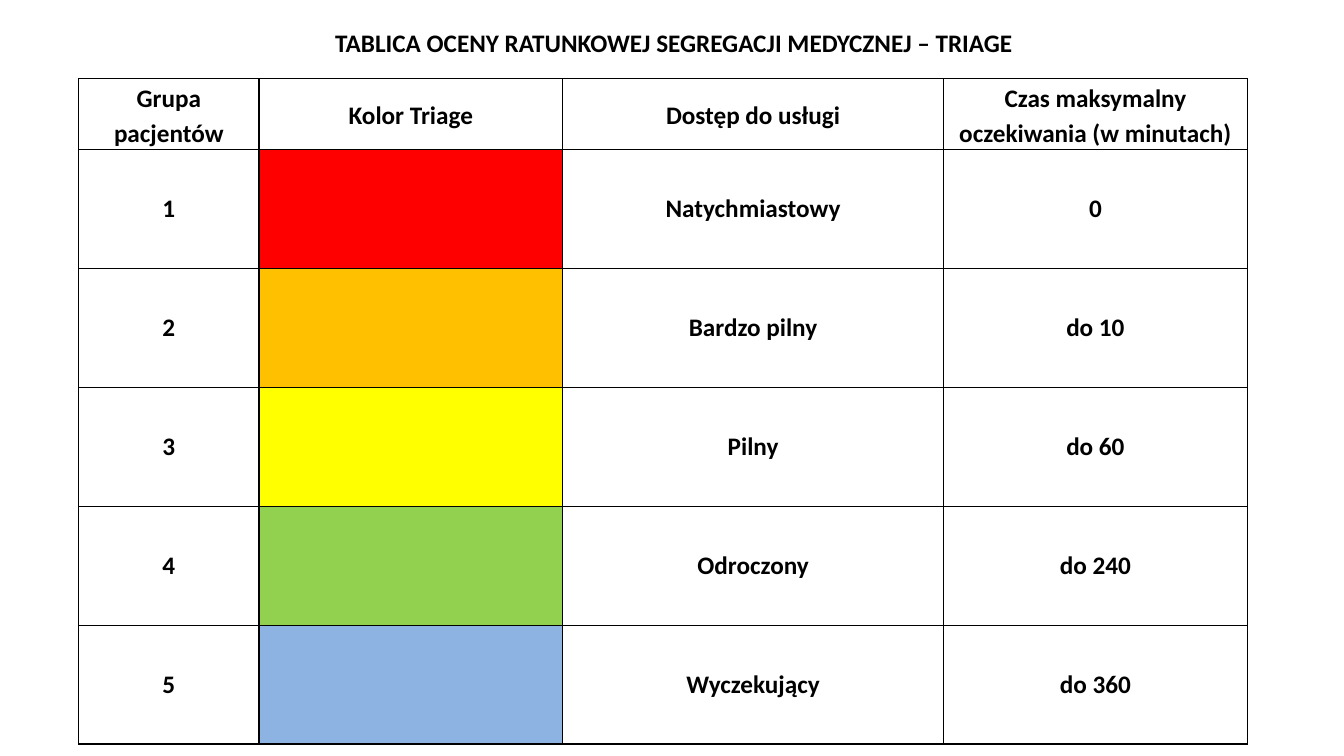
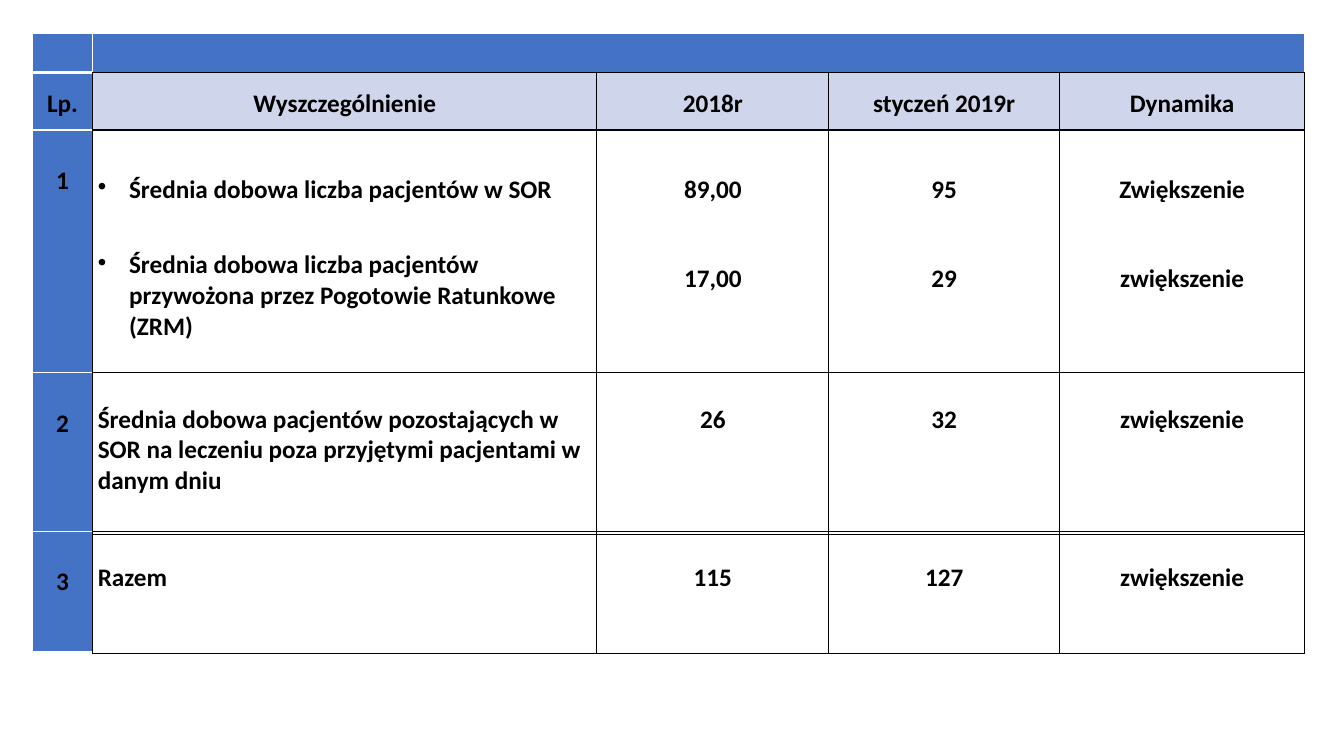
from lxml.etree import SubElement
from pptx import Presentation
from pptx.dml.color import RGBColor
from pptx.enum.text import MSO_ANCHOR as Anchor, MSO_AUTO_SIZE as AutoSize, PP_ALIGN as Align
from pptx.oxml.ns import qn
from pptx.util import Pt

PX = 9144  # one px is a hundredth of an inch
SLIDE_W, SLIDE_H = 1333, 750
TITLE_ONLY, BLANK = 5, 6
FONT = "Calibri"
COLORS = {
    "ink": "000000", "paper": "FFFFFF", "band": "4472C4", "heading": "CFD5EA",
    "red": "FF0000", "orange": "FFC000", "yellow": "FFFF00",
    "green": "92D050", "blue": "8DB3E2",
}

TRIAGE_TITLE = "TABLICA OCENY RATUNKOWEJ SEGREGACJI MEDYCZNEJ – TRIAGE"
TRIAGE_HEADINGS = ["Grupa pacjentów", "Kolor Triage", "Dostęp do usługi",
                   "Czas maksymalny oczekiwania (w minutach)"]
TRIAGE_GROUPS = [
    ("red", "Natychmiastowy", "0"),
    ("orange", "Bardzo pilny", "do 10"),
    ("yellow", "Pilny", "do 60"),
    ("green", "Odroczony", "do 240"),
    ("blue", "Wyczekujący", "do 360"),
]

STATS_COLUMNS = [60, 500, 230, 229, 243]
STATS_HEADINGS = ["Lp.", "Wyszczególnienie", "2018r", "styczeń 2019r", "Dynamika"]
DAILY_PATIENTS = [
    ["1"],
    ["Średnia dobowa liczba pacjentów w SOR",
     "Średnia dobowa liczba pacjentów przywożona przez Pogotowie Ratunkowe (ZRM)"],
    ["89,00", "17,00"],
    ["95", "29"],
    ["Zwiększenie", "zwiększenie"],
]
REMAINING_PATIENTS = [
    ["2"],
    ["Średnia dobowa pacjentów pozostających w SOR na leczeniu poza "
     "przyjętymi pacjentami w danym dniu"],
    ["26"], ["32"], ["zwiększenie"],
]
TOTAL = [["3"], ["Razem"], ["115"], ["127"], ["zwiększenie"]]


def rgb(name):
    return RGBColor.from_string(COLORS[name])


def add_bullet(paragraph, indent=31):
    properties = paragraph._p.get_or_add_pPr()
    properties.set("marL", str(indent * PX))
    properties.set("indent", str(-indent * PX))
    SubElement(properties, qn("a:buChar"), char="•")


def write(frame, lines, align=Align.CENTER, spacing=1.0, gap=0, bullets=False):
    """Fill a text frame with bold lines; gap is the space between them in points."""
    frame.word_wrap = True
    for index, line in enumerate(lines):
        paragraph = frame.add_paragraph() if index else frame.paragraphs[0]
        paragraph.alignment = align
        paragraph.line_spacing = spacing
        paragraph.space_before = Pt(gap if index else 0)
        run = paragraph.add_run()
        run.text = line
        run.font.name, run.font.size, run.font.bold = FONT, Pt(18), True
        run.font.color.rgb = rgb("ink")
        if bullets:
            add_bullet(paragraph)


def set_borders(cell, **sides):
    """Draw the four edges in ink at 1 pt, except sides given as (colour, points)."""
    properties = cell._tc.get_or_add_tcPr()
    for side in "LRTB":
        color, width = sides.get(side, ("ink", 1))
        line = SubElement(properties, qn(f"a:ln{side}"), w=str(Pt(width)))
        fill = SubElement(line, qn("a:solidFill"))
        SubElement(fill, qn("a:srgbClr"), val=COLORS[color])


def format_cell(cell, lines=(), fill=None, inset=5, top=0, anchor=Anchor.MIDDLE,
                borders=None, **text_format):
    set_borders(cell, **(borders or {}))
    if fill:
        cell.fill.solid()
        cell.fill.fore_color.rgb = rgb(fill)
    else:
        cell.fill.background()
    cell.margin_left = cell.margin_right = inset * PX
    cell.margin_top, cell.margin_bottom = top * PX, 0
    cell.vertical_anchor = anchor
    if lines:
        write(cell.text_frame, lines, **text_format)


def add_grid(slide, left, top, columns, rows):
    table = slide.shapes.add_table(
        len(rows), len(columns), left * PX, top * PX,
        sum(columns) * PX, sum(rows) * PX).table
    table.first_row = table.horz_banding = False
    for column, width in zip(table.columns, columns):
        column.width = width * PX
    for row, height in zip(table.rows, rows):
        row.height = height * PX
    return table


def add_title(slide, text):
    title = slide.shapes.title
    title.left, title.top, title.width, title.height = (
        length * PX for length in (33, 18, 1271, 43))
    title.text_frame.auto_size = AutoSize.NONE
    title.text_frame.vertical_anchor = Anchor.TOP
    write(title.text_frame, [text], spacing=1.15)


def build_triage(slide):
    add_title(slide, TRIAGE_TITLE)
    table = add_grid(slide, 78, 78, [179, 301, 378, 301],
                     [69] + [118] * len(TRIAGE_GROUPS))
    for column, heading in enumerate(TRIAGE_HEADINGS):
        format_cell(table.cell(0, column), [heading], inset=6, spacing=1.15)
    for number, (color, access, wait) in enumerate(TRIAGE_GROUPS, start=1):
        for column, label in ((0, str(number)), (2, access), (3, wait)):
            format_cell(table.cell(number, column), [label], inset=6)
        format_cell(table.cell(number, 1), fill=color)


def number_borders(top=1, bottom=1):
    return {"L": ("paper", 1), "T": ("paper", top), "B": ("paper", bottom)}


def fill_stats_row(table, row, entries, top, gap=0, bullets=False, bottom=1):
    number, description, *values = entries
    format_cell(table.cell(row, 0), number, fill="band", top=35, anchor=Anchor.TOP,
                borders=number_borders(bottom=bottom))
    # Bulleted descriptions sit 10 pt closer than the values beside them.
    format_cell(table.cell(row, 1), description, top=top, anchor=Anchor.TOP,
                align=Align.LEFT, gap=gap - 10 if bullets else gap, bullets=bullets)
    for column, value in enumerate(values, start=2):
        format_cell(table.cell(row, column), value, top=top, anchor=Anchor.TOP, gap=gap)


def build_statistics(slide):
    table = add_grid(slide, 32, 33, STATS_COLUMNS, [39, 57, 241, 160])
    white = ("paper", 1)
    for column, heading in enumerate(STATS_HEADINGS):
        first = column == 0
        format_cell(table.cell(0, column), fill="band",
                    borders={"L": white, "R": white, "T": white,
                             "B": ("paper", 3) if first else ("ink", 1)})
        format_cell(table.cell(1, column), [heading], spacing=1.15,
                    fill="band" if first else "heading",
                    borders=number_borders(top=3) if first else None)
    table.cell(0, 1).merge(table.cell(0, len(STATS_COLUMNS) - 1))
    fill_stats_row(table, 2, DAILY_PATIENTS, top=44, gap=42, bullets=True)
    fill_stats_row(table, 3, REMAINING_PATIENTS, top=31)

    total = add_grid(slide, 32, 527, STATS_COLUMNS, [121])
    fill_stats_row(total, 0, TOTAL, top=31, bottom=3)


def main():
    deck = Presentation()
    deck.slide_width, deck.slide_height = SLIDE_W * PX, SLIDE_H * PX
    for layout, build in ((TITLE_ONLY, build_triage), (BLANK, build_statistics)):
        build(deck.slides.add_slide(deck.slide_layouts[layout]))
    deck.save("out.pptx")


if __name__ == "__main__":
    main()
